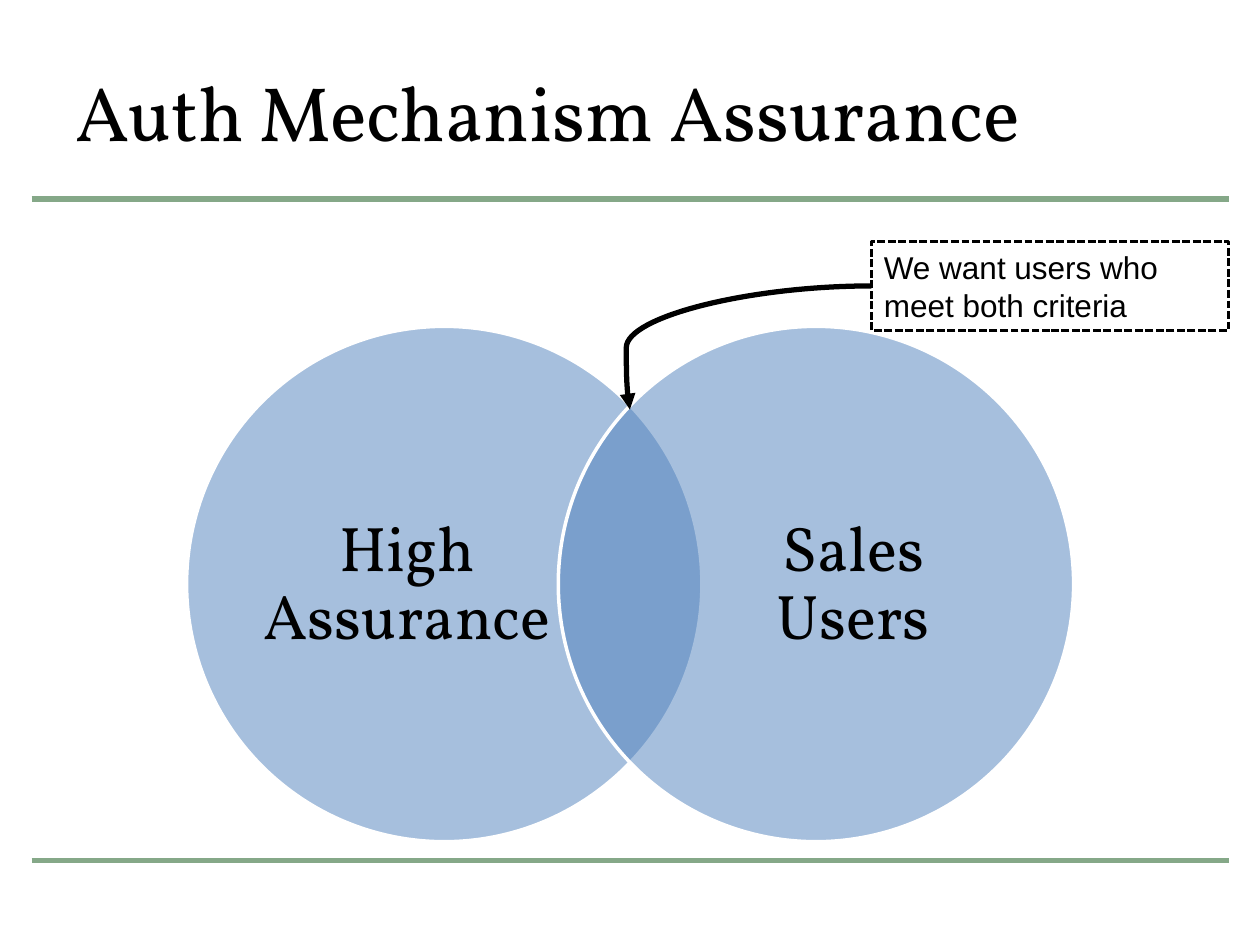
import pptx
import pptx.util
import pptx.dml.color
import pptx.enum.dml
import pptx.enum.shapes
import pptx.enum.text
import pptx.oxml
import pptx.oxml.ns
import lxml.etree

Pt = pptx.util.Pt
RGB = pptx.dml.color.RGBColor.from_string
SHAPE = pptx.enum.shapes.MSO_SHAPE
CONNECTOR = pptx.enum.shapes.MSO_CONNECTOR
ALIGN = pptx.enum.text.PP_ALIGN
MIDDLE = pptx.enum.text.MSO_ANCHOR.MIDDLE
qn = pptx.oxml.ns.qn

theme = {
    "rule": RGB("85A888"), "circle": RGB("4F81BD"),
    "ink": RGB("000000"), "paper": RGB("FFFFFF"),
    "title": {"name": "Vollkorn", "size": Pt(44)},
    "label": {"name": "Vollkorn", "size": Pt(36)},
    "note": {"name": "Arial", "size": Pt(18)},
}


def write(sp, text, style, align, **frame):
    tf = sp.text_frame
    for key, value in {"word_wrap": True, "vertical_anchor": MIDDLE, **frame}.items():
        setattr(tf, key, value)
    p = tf.paragraphs[0]
    p.alignment = align
    r = p.add_run()
    r.text = text
    for key, value in theme[style].items():
        setattr(r.font, key, value)
    r.font.color.rgb = theme["ink"]
    return p


def connect(kind, x1, y1, x2, y2, color):
    cxn = s.shapes.add_connector(kind, Pt(x1), Pt(y1), Pt(x2), Pt(y2))
    cxn.line.color.rgb = theme[color]
    cxn.line.width = Pt(3)
    lxml.etree.SubElement(cxn._element.spPr, qn("a:effectLst"))
    return cxn


prs = pptx.Presentation()
prs.slide_width, prs.slide_height = Pt(720), Pt(540)
s = prs.slides.add_slide(prs.slide_layouts[5])

# Rules above and below the content
for y in (113.76, 491.76):
    connect(CONNECTOR.STRAIGHT, 18, y, 702, y, "rule")

# Title
sp = s.shapes.title
sp.left, sp.top, sp.width, sp.height = Pt(36), Pt(18), Pt(648), Pt(90)
write(sp, "Auth Mechanism Assurance", "title", ALIGN.LEFT)

# Overlapping circles with their labels
diameter = 294.5
for text, circle_x, label_x in (("High Assurance", 106.6, 147.6),
                                ("Sales Users", 319, 402.5)):
    sp = s.shapes.add_shape(SHAPE.OVAL, Pt(circle_x), Pt(186.5), Pt(diameter), Pt(diameter))
    sp.shadow.inherit = False
    sp.fill.solid()
    sp.fill.fore_color.rgb = theme["circle"]
    color = sp._element.spPr.find(qn("a:solidFill"))[0]
    lxml.etree.SubElement(color, qn("a:alpha"), val="50000")
    sp.line.color.rgb = theme["paper"]
    sp.line.width = Pt(2)

    sp = s.shapes.add_textbox(Pt(label_x), Pt(221.8), Pt(170), Pt(225.4))
    p = write(sp, text, "label", ALIGN.CENTER,
              margin_left=0, margin_top=0, margin_right=0, margin_bottom=0)
    p.line_spacing = 0.9

# Dashed note
sp = s.shapes.add_shape(SHAPE.RECTANGLE, Pt(498), Pt(138), Pt(204), Pt(50.9))
sp.shadow.inherit = False
sp.fill.background()
sp.line.color.rgb = theme["ink"]
sp.line.width = Pt(1.5)
sp.line.dash_style = pptx.enum.dml.MSO_LINE.SQUARE_DOT
write(sp, "We want users who meet both criteria", "note", ALIGN.LEFT,
      auto_size=pptx.enum.text.MSO_AUTO_SIZE.SHAPE_TO_FIT_TEXT)

# Curved arrow from the note to the overlap
cxn = connect(CONNECTOR.CURVE, 498, 163.4, 360, 234, "ink")
adjust = cxn._element.spPr.find(qn("a:prstGeom")).get_or_add_avLst()
lxml.etree.SubElement(adjust, qn("a:gd"), name="adj1", fmla="val 101500")
lxml.etree.SubElement(cxn.line._get_or_add_ln(), qn("a:tailEnd"), type="triangle")

prs.save("out.pptx")
